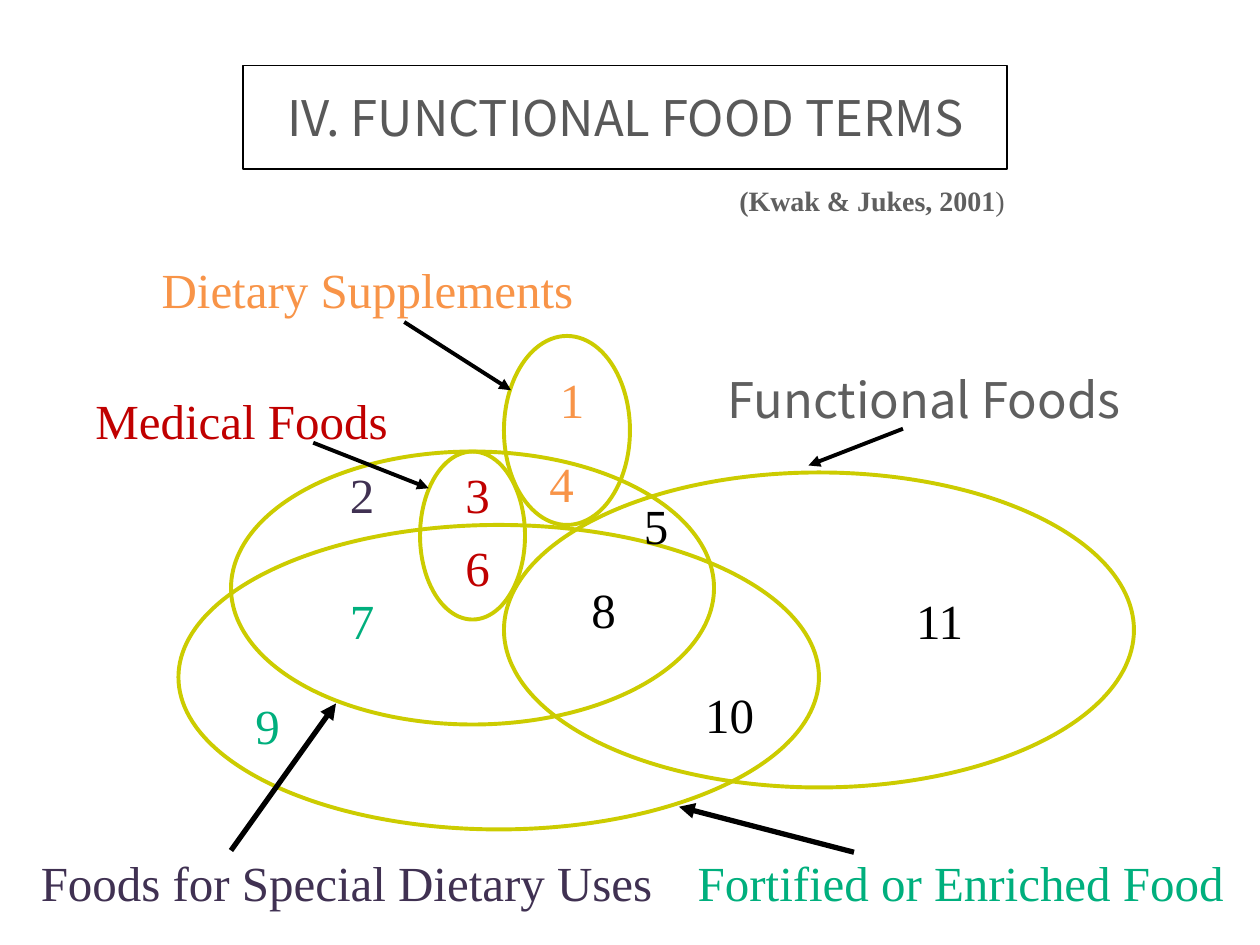
import pptx
import pptx.util
import pptx.dml.color
import pptx.enum.shapes
import pptx.enum.text
import pptx.oxml.ns
import lxml.etree

Pt = pptx.util.Pt
RGB = pptx.dml.color.RGBColor
SHAPE = pptx.enum.shapes.MSO_SHAPE
ALIGN = pptx.enum.text.PP_ALIGN

BLACK = RGB(0x00, 0x00, 0x00)
WHITE = RGB(0xFF, 0xFF, 0xFF)
OLIVE = RGB(0xCC, 0xCC, 0x00)
TITLE_GRAY = RGB(0x59, 0x59, 0x59)
GRAY = RGB(0x5F, 0x5F, 0x5F)
PURPLE = RGB(0x40, 0x31, 0x52)
GREEN = RGB(0x00, 0xAF, 0x7D)
RED = RGB(0xC0, 0x00, 0x00)
ORANGE = RGB(0xF8, 0x94, 0x48)
SERIF = "Times New Roman"
SANS = "Noto Sans CJK KR"

TITLE = "IV. FUNCTIONAL FOOD TERMS"
TITLE_BOX = (139, 37.5, 436.5, 59)
CITATION = [("(Kwak & Jukes, 2001", True), (")", False)]
CITATION_BOX = (366, 100, 293, 29)
CITATION_INDENT = 56.5

FOOD_SETS = [
    (288, 192, 72, 108),
    (288, 270, 360, 180),
    (102, 300, 366, 174),
    (132, 258, 276, 156),
    (240, 258, 60, 96),
]
SET_NAMES = [
    ("Foods for Special Dietary Uses", (24, 492, 348, 24), SERIF, PURPLE),
    ("Fortified or Enriched Food", (390, 492, 318, 24), SERIF, GREEN),
    ("Medical Foods", (42, 228, 192, 24), SERIF, RED),
    ("Dietary Supplements", (96, 150, 228, 30), SERIF, ORANGE),
    ("Functional Foods", (420, 216, 216, 24), SANS, GRAY),
]
REGION_SIZE = (30, 24)
REGIONS = [
    (312, 216, ORANGE), (192, 270, PURPLE), (258, 270, RED),
    (306, 264, ORANGE), (360, 288, BLACK), (258, 312, RED),
    (192, 342, GREEN), (330, 336, BLACK), (138, 402, GREEN),
    (402, 396, BLACK), (522, 342, BLACK),
]
ARROWS = [
    ((132, 486), (192, 402), 3),
    ((488, 487), (388, 461), 3),
    ((516, 245), (462, 266), 2.25),
    ((231, 184), (292, 223), 2.25),
    ((179, 253), (245, 279), 2.25),
]


def points(values):
    return [Pt(value) for value in values]


def write_text(shape, text, font=SERIF, size=28, color=BLACK,
               align=ALIGN.CENTER, wrap=False, left_inset=7.2):
    frame = shape.text_frame
    frame.auto_size = pptx.enum.text.MSO_AUTO_SIZE.NONE
    frame.word_wrap = wrap
    frame.vertical_anchor = pptx.enum.text.MSO_ANCHOR.MIDDLE
    frame.margin_left = Pt(left_inset)
    paragraph = frame.paragraphs[0]
    paragraph.alignment = align
    pieces = [(text, False)] if isinstance(text, str) else text
    for words, bold in pieces:
        run = paragraph.add_run()
        run.text = words
        run.font.name = font
        run.font.size = Pt(size)
        run.font.bold = bold
        run.font.color.rgb = color
        if font == SANS:
            east_asian = lxml.etree.SubElement(
                run.font._element, pptx.oxml.ns.qn("a:ea"))
            east_asian.set("typeface", font)


def add_oval(slide, box, line_color=None):
    oval = slide.shapes.add_shape(SHAPE.OVAL, *points(box))
    oval.shadow.inherit = False
    oval.fill.background()
    if line_color is None:
        oval.line.fill.background()
    else:
        oval.line.color.rgb = line_color
        oval.line.width = Pt(2.25)
    return oval


def add_arrow(slide, start, end, width):
    arrow = slide.shapes.add_connector(
        pptx.enum.shapes.MSO_CONNECTOR.STRAIGHT, *points(start + end))
    arrow.line.color.rgb = BLACK
    arrow.line.width = Pt(width)
    qn = pptx.oxml.ns.qn
    head = lxml.etree.SubElement(arrow.line._get_or_add_ln(), qn("a:tailEnd"))
    head.set("type", "triangle")
    lxml.etree.SubElement(arrow._element.spPr, qn("a:effectLst"))


def main():
    deck = pptx.Presentation()
    deck.slide_width, deck.slide_height = Pt(720), Pt(540)
    slide = deck.slides.add_slide(deck.slide_layouts[5])

    title = slide.shapes.title
    title.left, title.top, title.width, title.height = points(TITLE_BOX)
    title.fill.solid()
    title.fill.fore_color.rgb = WHITE
    title.line.color.rgb = BLACK
    title.line.width = Pt(1)
    write_text(title, TITLE, font=SANS, color=TITLE_GRAY)

    for box in FOOD_SETS:
        add_oval(slide, box, OLIVE)
    for name, box, font, color in SET_NAMES:
        label = slide.shapes.add_textbox(*points(box))
        write_text(label, name, font=font, color=color)
    for number, (left, top, color) in enumerate(REGIONS, start=1):
        region = add_oval(slide, (left, top) + REGION_SIZE)
        write_text(region, str(number), color=color)
    for start, end, width in ARROWS:
        add_arrow(slide, start, end, width)

    citation = slide.shapes.add_textbox(*points(CITATION_BOX))
    write_text(citation, CITATION, size=16, color=GRAY, align=ALIGN.LEFT,
               wrap=True, left_inset=CITATION_INDENT)

    deck.save("out.pptx")


if __name__ == "__main__":
    main()
